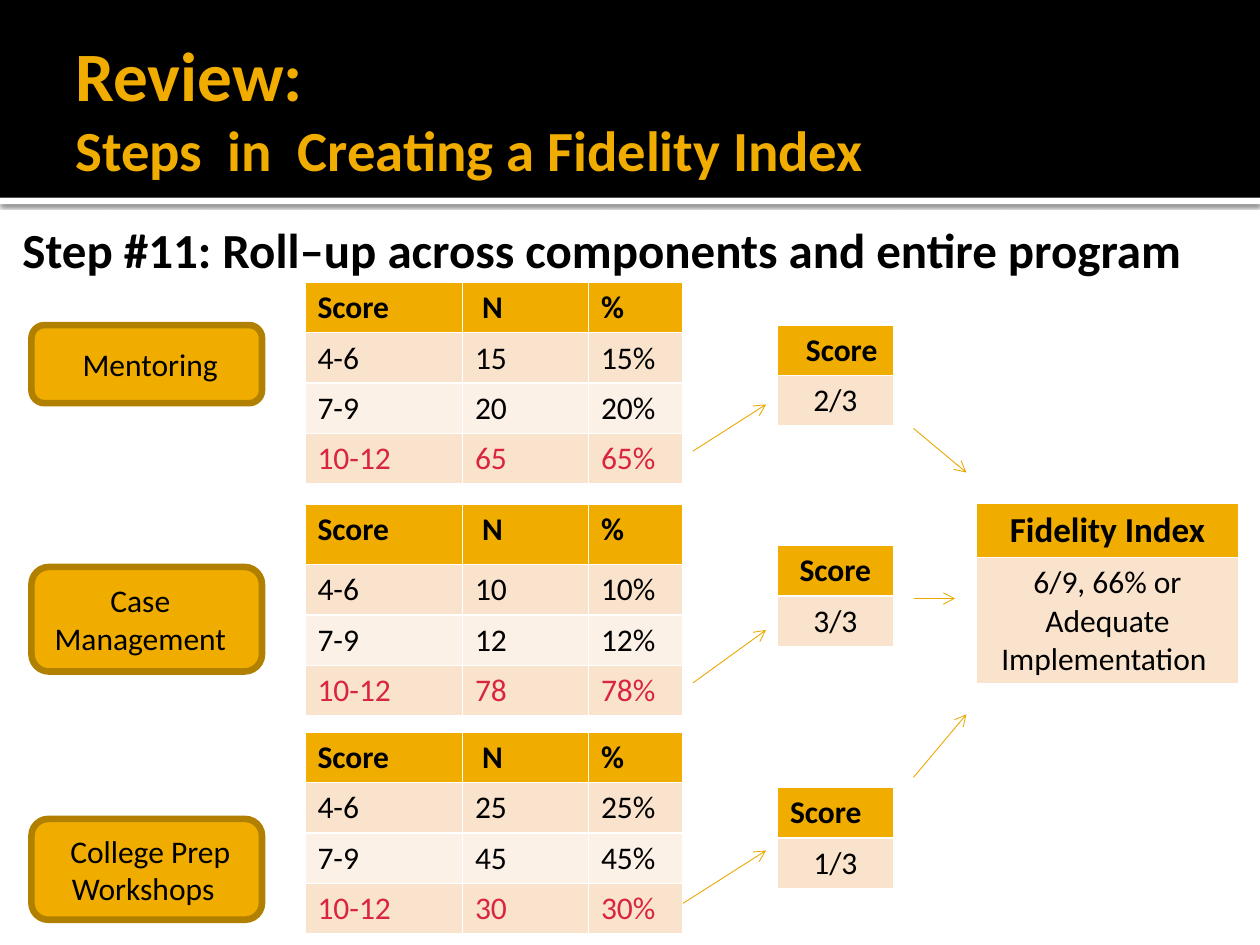
import pptx
import pptx.dml.color
import pptx.enum.shapes
import pptx.enum.text
import pptx.oxml
import pptx.oxml.ns
import pptx.util
from lxml import etree

Inches = pptx.util.Inches
Pt = pptx.util.Pt
SHAPES = pptx.enum.shapes.MSO_SHAPE
ALIGN = pptx.enum.text.PP_ALIGN
ANCHOR = pptx.enum.text.MSO_ANCHOR

THEME = {
    "font": "Calibri", "black": "000000", "white": "FFFFFF", "gold": "F0AD00",
    "gold_dark": "B28000", "arrow": "EBA900", "red": "D9253E",
    "band_dark": "F9E3CC", "band_light": "FCF1E7",
    "title": 39.6, "subtitle": 32.4, "step": 28, "index": 20, "body": 18,
}

# Content
TITLE = ("Review:", "Steps  in  Creating a Fidelity Index")
STEP = "Step #11: Roll–up across components and entire program"
SCORE_HEADER = ("Score", " N", "%")
SCORE_BANDS = ("4-6", "7-9", "10-12")
COMPONENTS = [
    {"label": " Mentoring", "box": (2.58, 0.62), "right_inset": 0.1,
     "table_top": 2.24, "header_height": 0.4, "counts": (15, 20, 65),
     "score": "2/3", "score_top": 2.58, "score_align": ALIGN.CENTER, "score_inset": 0.2},
    {"label": "Case Management", "box": (4.5, 0.83), "right_inset": 0.2,
     "table_top": 4, "header_height": 0.48, "counts": (10, 12, 78),
     "score": "3/3", "score_top": 4.33, "score_align": ALIGN.CENTER, "score_inset": 0.1},
    {"label": " College Prep Workshops ", "box": (6.5, 0.8), "right_inset": 0.1,
     "table_top": 5.81, "header_height": 0.4, "counts": (25, 45, 30),
     "score": "1/3", "score_top": 6.25, "score_align": ALIGN.LEFT, "score_inset": 0.1},
]
INDEX_ROWS = [["Fidelity Index"], ["6/9, 66% or Adequate Implementation "]]
ARROWS = [
    (5.5, 3.58, 6.08, 3.21), (5.5, 5.42, 6.08, 5), (5.42, 7.17, 6.08, 6.75),
    (7.25, 3.4, 7.67, 3.75), (7.25, 4.75, 7.58, 4.75), (7.25, 6.17, 7.67, 5.67),
]

# Shared columns
BOX_LEFT, BOX_WIDTH = 0.25, 1.83
TABLE_LEFT, TABLE_COLUMNS, ROW_HEIGHT = 2.42, (1.25, 1, 0.75), 0.4
SCORE_LEFT, SCORE_WIDTH = 6.17, 0.92


def color(name):
    return pptx.dml.color.RGBColor.from_string(THEME[name])


def style_runs(paragraph, size="body", ink="black", bold=False, align=None):
    paragraph.alignment = align
    for run in paragraph.runs:
        run.font.name = THEME["font"]
        run.font.size = Pt(THEME[size])
        run.font.bold = bold
        run.font.color.rgb = color(ink)


def add_block(slide, kind, place, fill, line=None):
    shape = slide.shapes.add_shape(kind, *map(Inches, place))
    shape.shadow.inherit = False
    shape.fill.solid()
    shape.fill.fore_color.rgb = color(fill)
    if line:
        shape.line.color.rgb = color(line)
        shape.line.width = Pt(3.78)
    else:
        shape.line.fill.background()
    return shape


def add_text(slide, place, text):
    frame = slide.shapes.add_textbox(*map(Inches, place)).text_frame
    frame.word_wrap = True
    frame.text = text
    return frame


def add_grid(slide, left, top, widths, heights, rows, align=None, header_size="body"):
    frame = slide.shapes.add_table(
        len(rows), len(widths), Inches(left), Inches(top),
        Inches(sum(widths)), Inches(sum(heights)))
    table = frame.table
    for column, width in zip(table.columns, widths):
        column.width = Inches(width)
    for row_number, values in enumerate(rows):
        table.rows[row_number].height = Inches(heights[row_number])
        header = row_number == 0
        fill = "gold" if header else ("band_dark" if row_number % 2 else "band_light")
        for cell, value in zip(table.rows[row_number].cells, values):
            cell.text = value
            cell.fill.solid()
            cell.fill.fore_color.rgb = color(fill)
            style_runs(cell.text_frame.paragraphs[0], header_size if header else "body",
                       "red" if row_number == 3 else "black", header, align)
    return table


def add_arrow(slide, ends):
    connector = slide.shapes.add_connector(
        pptx.enum.shapes.MSO_CONNECTOR.STRAIGHT, *map(Inches, ends))
    connector.line.color.rgb = color("arrow")
    connector.line.width = Pt(0.5)
    line = connector.line._get_or_add_ln()
    etree.SubElement(line, pptx.oxml.ns.qn("a:tailEnd"), type="arrow")
    etree.SubElement(connector._element.spPr, pptx.oxml.ns.qn("a:effectLst"))


def add_heading(slide):
    # White rule with a soft shadow under the black band
    rule = add_block(slide, SHAPES.RECTANGLE, (0, 1.57, 10, 0.05), "white")
    effects = rule._element.spPr.find(pptx.oxml.ns.qn("a:effectLst"))
    effects.append(pptx.oxml.parse_xml(
        '<a:outerShdw xmlns:a="http://schemas.openxmlformats.org/drawingml/2006/main" '
        'blurRad="31750" dist="10160" dir="5400000" algn="tl" rotWithShape="0">'
        '<a:srgbClr val="000000"><a:alpha val="60000"/></a:srgbClr></a:outerShdw>'))
    add_block(slide, SHAPES.RECTANGLE, (0, 0, 10, 1.57), "black")

    # Title and step line
    title = add_text(slide, (0.5, 0.17, 9, 1.37), "\v".join(TITLE))
    title.vertical_anchor = ANCHOR.MIDDLE
    title.margin_right = Inches(0.05)
    paragraph = title.paragraphs[0]
    style_runs(paragraph, "title", "gold", True)
    paragraph.runs[1].font.size = Pt(THEME["subtitle"])
    step = add_text(slide, (0.08, 1.69, 10.25, 0.57), STEP)
    style_runs(step.paragraphs[0], "step", bold=True)


def add_component(slide, component):
    # Name box
    top, height = component["box"]
    box = add_block(slide, SHAPES.FLOWCHART_ALTERNATE_PROCESS,
                    (BOX_LEFT, top, BOX_WIDTH, height), "gold", "gold_dark")
    frame = box.text_frame
    frame.text = component["label"]
    frame.word_wrap = True
    frame.vertical_anchor = ANCHOR.MIDDLE
    frame.margin_right = Inches(component["right_inset"])
    style_runs(frame.paragraphs[0], align=ALIGN.CENTER)

    # Score distribution
    rows = [SCORE_HEADER] + [
        (band, str(count), f"{count}%")
        for band, count in zip(SCORE_BANDS, component["counts"])]
    heights = [component["header_height"]] + [ROW_HEIGHT] * len(SCORE_BANDS)
    add_grid(slide, TABLE_LEFT, component["table_top"], TABLE_COLUMNS, heights, rows)

    # Component score
    score = add_grid(slide, SCORE_LEFT, component["score_top"], [SCORE_WIDTH],
                     [ROW_HEIGHT] * 2, [["Score"], [component["score"]]], ALIGN.CENTER)
    header = score.cell(0, 0)
    header.margin_left = Inches(component["score_inset"])
    header.text_frame.paragraphs[0].alignment = component["score_align"]


def main():
    presentation = pptx.Presentation()
    presentation.slide_width = Inches(10)
    presentation.slide_height = Inches(7.5)
    slide = presentation.slides.add_slide(presentation.slide_layouts[6])
    add_heading(slide)
    for component in COMPONENTS:
        add_component(slide, component)
    # Program-level index
    add_grid(slide, 7.75, 3.99, [2.08], [0.43, 1], INDEX_ROWS, ALIGN.CENTER, "index")
    for ends in ARROWS:
        add_arrow(slide, ends)
    presentation.save("out.pptx")


if __name__ == "__main__":
    main()
